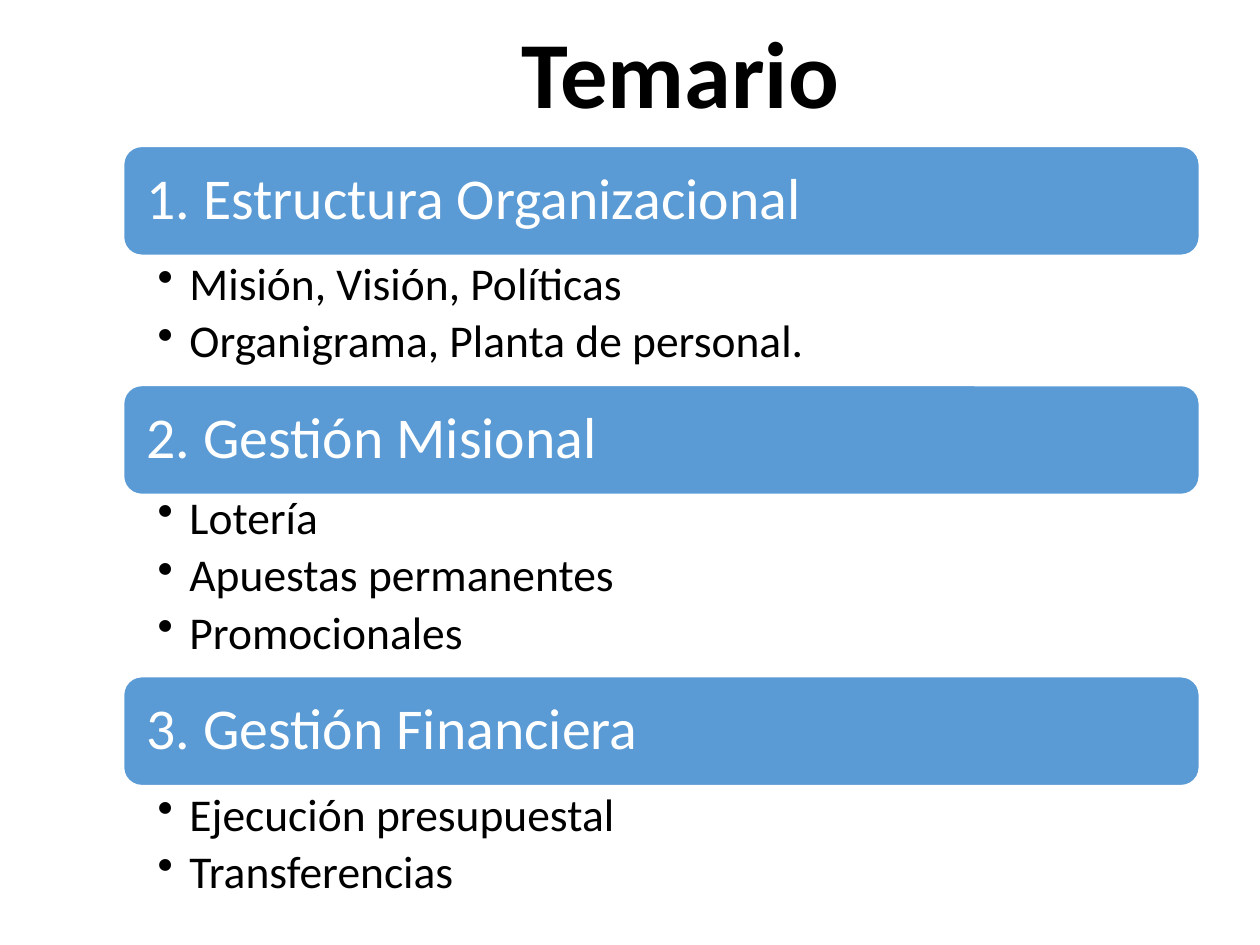
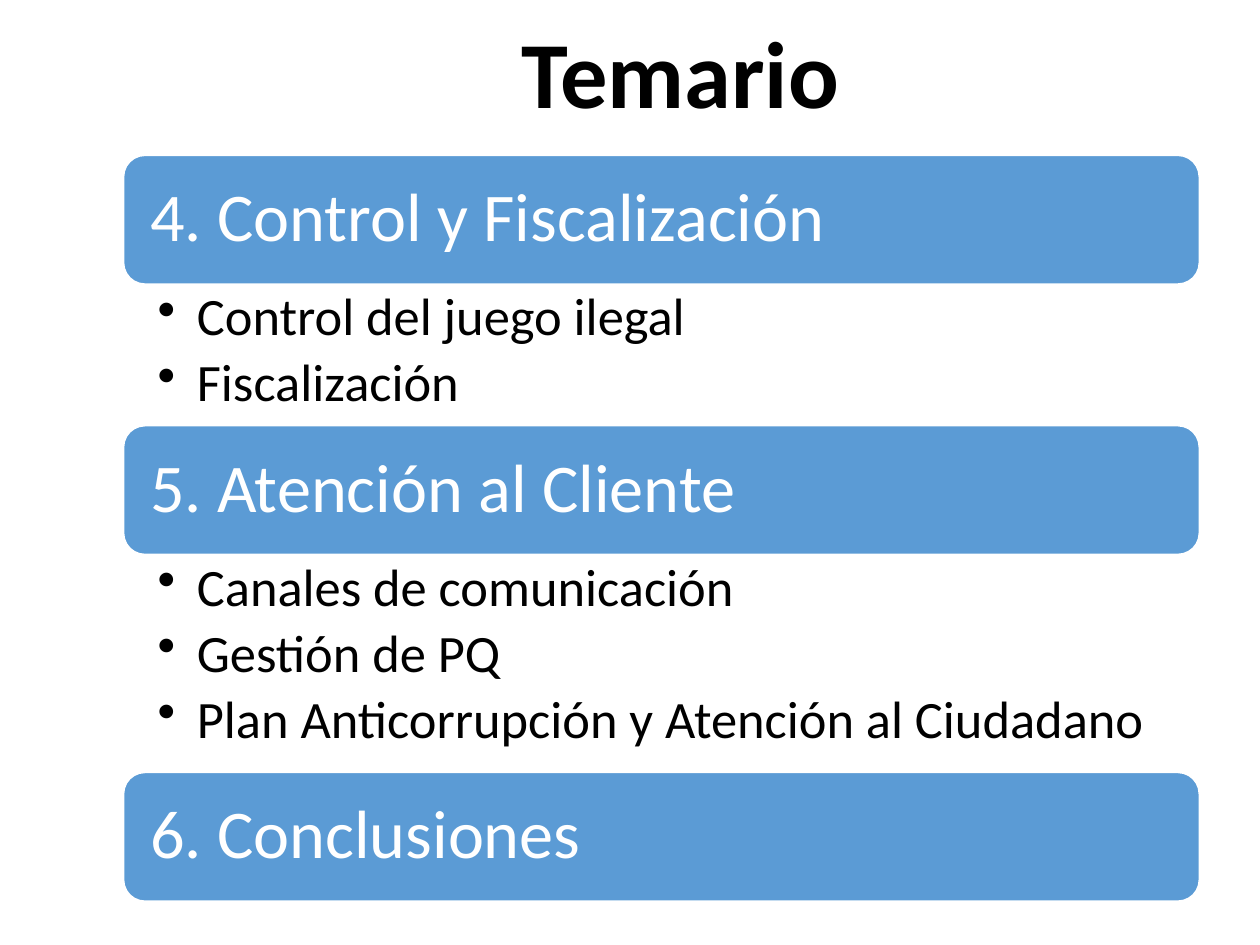
from lxml.etree import SubElement
from pptx import Presentation
from pptx.dml.color import RGBColor
from pptx.enum.shapes import MSO_SHAPE
from pptx.enum.text import MSO_ANCHOR, PP_ALIGN
from pptx.oxml.ns import qn
from pptx.util import Cm, Pt

BLUE = RGBColor(0x5B, 0x9B, 0xD5)
WHITE = RGBColor(0xFF, 0xFF, 0xFF)
BLACK = RGBColor(0x00, 0x00, 0x00)
FONT = "Calibri"
LEFT, WIDTH = Cm(2.49), Cm(21.69)

# Each topic: heading, top of its bar, top of its list, list items (cm)
AGENDA = [
    {
        "bar_height": 2.2, "bar_inset": 0.36, "heading_size": 33,
        "item_size": 26, "item_height": 1.26, "indent": 0.64, "right_inset": 0.66,
        "topics": [
            ("1. Estructura Organizacional", 2.95, 5.14,
             ["Misión, Visión, Políticas", "Organigrama, Planta de personal."]),
            ("2. Gestión Misional", 7.77, 9.86,
             ["Lotería", "Apuestas permanentes", "Promocionales"]),
            ("3. Gestión Financiera", 13.64, 15.84,
             ["Ejecución presupuestal", "Transferencias"]),
        ],
    },
    {
        "bar_height": 2.6, "bar_inset": 0.41, "heading_size": 39,
        "item_size": 30, "item_height": 1.45, "indent": 0.79, "right_inset": 0.76,
        "topics": [
            ("4. Control y Fiscalización", 3.13, 5.73,
             ["Control del juego ilegal", "Fiscalización"]),
            ("5. Atención al Cliente", 8.58, 11.18,
             ["Canales de comunicación", "Gestión de PQ",
              "Plan Anticorrupción y Atención al Ciudadano"]),
            ("6. Conclusiones", 15.57, None, []),
        ],
    },
]


def write(paragraph, text, size, color, align=PP_ALIGN.LEFT, bold=False):
    paragraph.alignment = align
    paragraph.line_spacing = 0.9
    run = paragraph.add_run()
    run.text = text
    run.font.name = FONT
    run.font.size = Pt(size)
    run.font.bold = bold
    run.font.color.rgb = color


def add_bullet(paragraph, indent):
    properties = paragraph._p.get_or_add_pPr()
    properties.set("marL", str(Cm(indent)))
    properties.set("indent", str(-Cm(indent)))
    SubElement(properties, qn("a:buChar")).set("char", "•")


prs = Presentation()
prs.slide_width, prs.slide_height = Cm(25.4), Cm(19.05)

for page in AGENDA:
    slide = prs.slides.add_slide(prs.slide_layouts[6])

    title = slide.shapes.add_textbox(Cm(2.77), Cm(0.23), Cm(21.9), Cm(2.49)).text_frame
    title.word_wrap = True
    title.vertical_anchor = MSO_ANCHOR.BOTTOM
    write(title.paragraphs[0], "Temario", 54, BLACK, PP_ALIGN.CENTER, bold=True)

    for heading, bar_top, list_top, items in page["topics"]:
        bar = slide.shapes.add_shape(MSO_SHAPE.ROUNDED_RECTANGLE, LEFT, Cm(bar_top),
                                     WIDTH, Cm(page["bar_height"]))
        bar.shadow.inherit = False
        bar.fill.solid()
        bar.fill.fore_color.rgb = BLUE
        bar.line.color.rgb = WHITE
        bar.line.width = Pt(1)
        label = bar.text_frame
        label.word_wrap = True
        label.vertical_anchor = MSO_ANCHOR.MIDDLE
        label.margin_left = label.margin_right = Cm(page["bar_inset"])
        label.margin_top = label.margin_bottom = Cm(page["bar_inset"])
        write(label.paragraphs[0], heading, page["heading_size"], WHITE)

        if not items:
            continue
        subtopics = slide.shapes.add_textbox(
            LEFT, Cm(list_top), WIDTH, Cm(page["item_height"] * len(items))).text_frame
        subtopics.word_wrap = True
        subtopics.margin_left = Cm(0.69)
        subtopics.margin_right = Cm(page["right_inset"])
        for number, item in enumerate(items):
            paragraph = subtopics.add_paragraph() if number else subtopics.paragraphs[0]
            add_bullet(paragraph, page["indent"])
            paragraph.space_after = Pt(round(page["item_size"] * 0.18, 1))
            write(paragraph, item, page["item_size"], BLACK)

prs.save("out.pptx")
